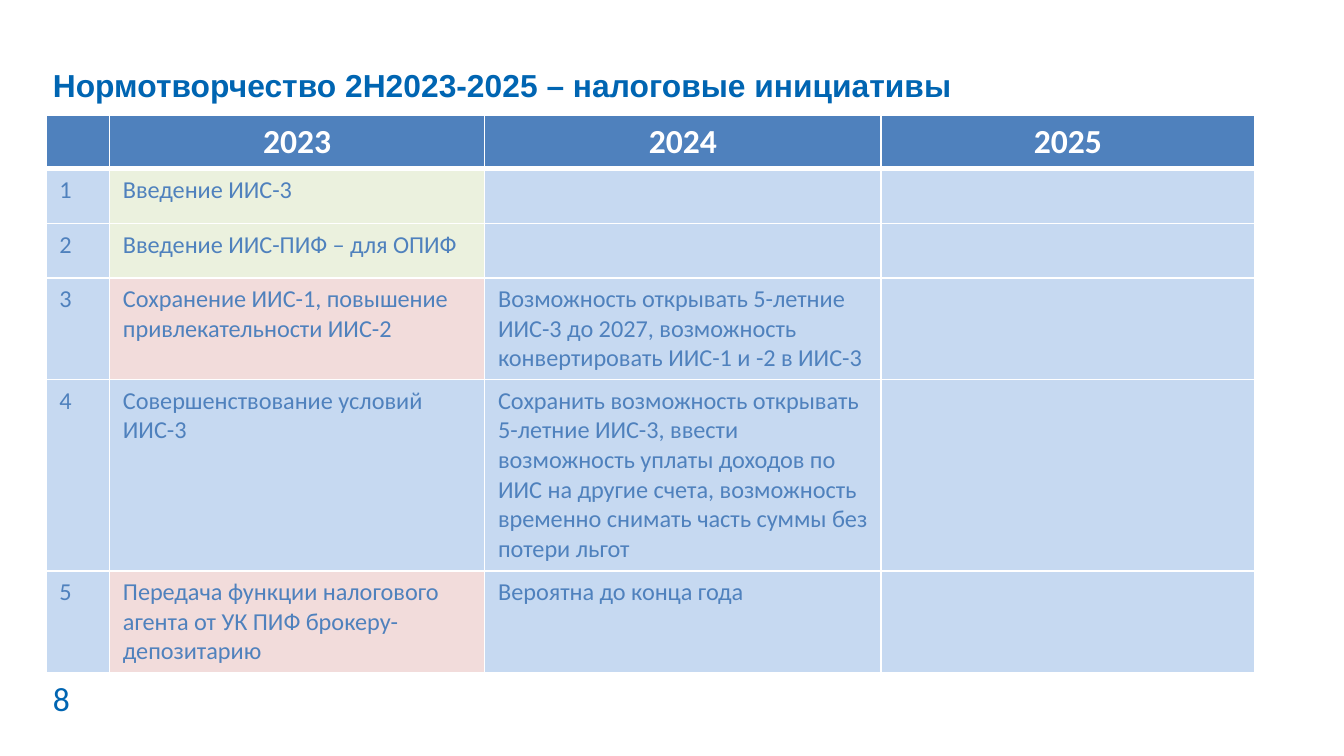
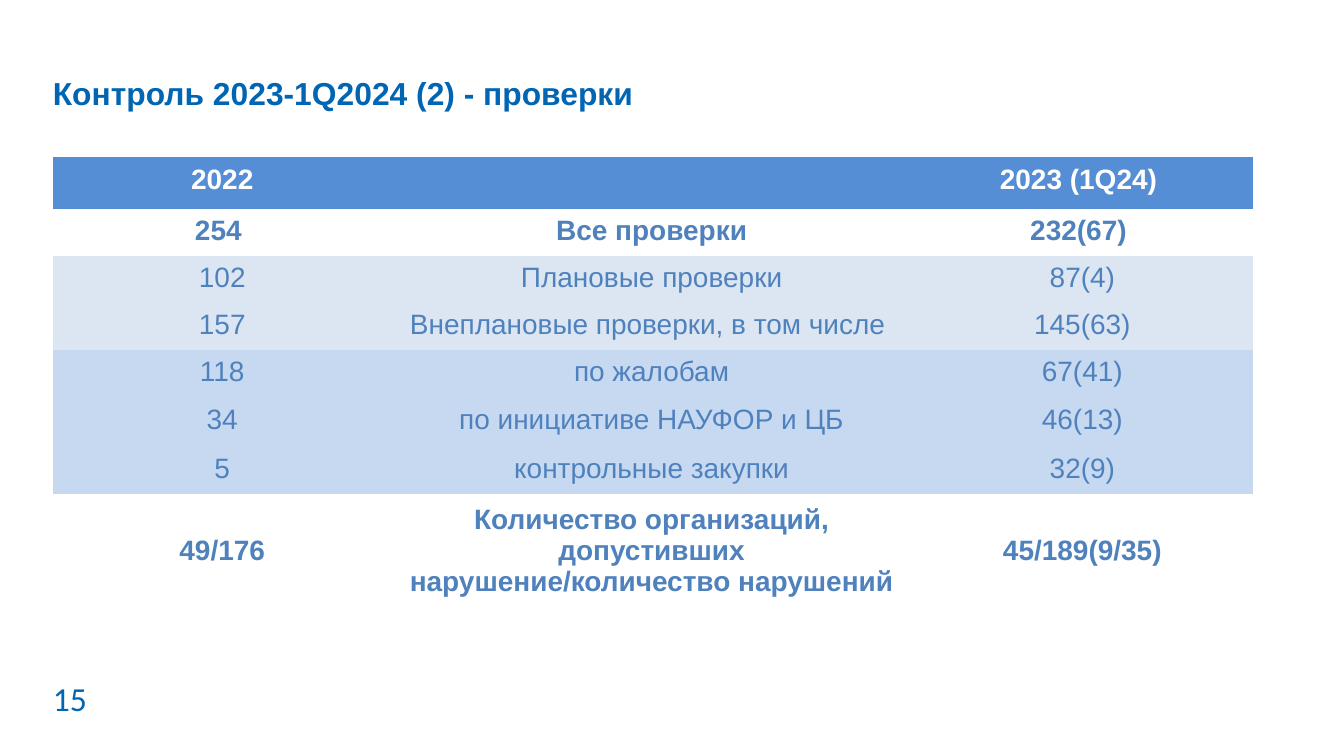
from lxml import etree
from pptx import Presentation
from pptx import util as u
from pptx.dml.color import RGBColor
from pptx.enum import text
from pptx.oxml.ns import qn

WHITE = RGBColor(0xFF, 0xFF, 0xFF)
NAVY = RGBColor(0x00, 0x65, 0xB2)
STEEL = RGBColor(0x4F, 0x81, 0xBD)
AZURE = RGBColor(0x55, 0x8E, 0xD5)
SKY = RGBColor(0xC6, 0xD9, 0xF1)
PALE = RGBColor(0xDC, 0xE6, 0xF2)
GREEN = RGBColor(0xEB, 0xF1, 0xDE)
PINK = RGBColor(0xF2, 0xDC, 0xDB)
PLAIN = "{2D5ABB26-0587-4C30-8999-92F81FD0307C}"
LEFT = text.PP_ALIGN.LEFT
MID = text.PP_ALIGN.CENTER

PLANS = [
    (1.02, STEEL, ["", "2023", "2024", "2025"]),
    (1.03, GREEN, ["1", "Введение ИИС-3", "", ""]),
    (1.03, GREEN, ["2", "Введение ИИС-ПИФ – для ОПИФ", "", ""]),
    (1.92, PINK, ["3", "Сохранение ИИС-1, повышение привлекательности ИИС-2",
                  "Возможность открывать 5-летние ИИС-3 до 2027, возможность "
                  "конвертировать ИИС-1 и -2 в ИИС-3", ""]),
    (3.61, SKY, ["4", "Совершенствование условий ИИС-3",
                 "Сохранить возможность открывать 5-летние ИИС-3, ввести "
                 "возможность уплаты доходов по ИИС на другие счета, возможность "
                 "временно снимать часть суммы без потери льгот", ""]),
    (1.93, PINK, ["5", "Передача функции налогового агента от УК ПИФ брокеру-депозитарию",
                  "Вероятна до конца года", ""]),
]
CHECKS = [
    (0.97, AZURE, ["2022", "", "2023 (1Q24) "]),
    (0.86, None, ["254 ", "Все проверки", "232(67) "]),
    (0.86, PALE, ["102", "Плановые проверки", "87(4)"]),
    (0.86, PALE, ["157", "Внеплановые проверки, в том числе ", "145(63)"]),
    (0.86, SKY, ["118", "по жалобам", "67(41)"]),
    (0.94, SKY, ["34", "по инициативе НАУФОР и ЦБ", "46(13)"]),
    (0.89, SKY, ["5", "контрольные закупки", "32(9)"]),
    (2.03, None, ["49/176", "Количество организаций, допустивших "
                  "нарушение/количество нарушений", "45/189(9/35)"]),
]


def style(para, face, size, color, bold=False):
    for run in para.runs:
        font = run.font
        font.name, font.size, font.bold = face, u.Pt(size), bold
        font.color.rgb = color
    if not para.runs:
        etree.SubElement(para._p, qn("a:endParaRPr"), sz=str(size * 100))


def label(slide, words, top, width, height, face, size, bold=False):
    box = slide.shapes.add_textbox(u.Cm(1), u.Cm(top), u.Cm(width), u.Cm(height))
    frame = box.text_frame
    frame.word_wrap = True
    frame.margin_left = frame.margin_right = frame.margin_top = frame.margin_bottom = 0
    frame.text = words
    style(frame.paragraphs[0], face, size, NAVY, bold)
    return frame.paragraphs[0]


def page(deck, title, top, width, number):
    slide = deck.slides.add_slide(deck.slide_layouts[6])
    label(slide, number, 12.8, 5.9, 0.71, "Calibri", 18)
    label(slide, title, top, width, 0.94, "Arial", 17, True).line_spacing = u.Pt(28)
    return slide


def edge(cell, head):
    props = cell._tc.get_or_add_tcPr()
    for side in "LRTB":
        points = 3 if head and side == "B" else 1
        line = etree.SubElement(props, qn(f"a:ln{side}"), w=str(u.Pt(points)))
        fill = etree.SubElement(line, qn("a:solidFill"))
        etree.SubElement(fill, qn("a:srgbClr"), val=str(WHITE))


def grid(slide, left, top, cols, rows, paint):
    high = sum(row[0] for row in rows)
    frame = slide.shapes.add_table(len(rows), len(cols), u.Cm(left), u.Cm(top),
                                   u.Cm(sum(cols)), u.Cm(high))
    table = frame.table
    table.horz_banding = False
    next(frame.element.iter(qn("a:tableStyleId"))).text = PLAIN
    for col, width in zip(table.columns, cols):
        col.width = u.Cm(width)
    for r, (height, color, words) in enumerate(rows):
        table.rows[r].height = u.Cm(height)
        for c, word in enumerate(words):
            cell = table.cell(r, c)
            cell.text = word
            paint(cell, r, c, color)


def plan(cell, r, c, color):
    head = r == 0
    edge(cell, head)
    cell.fill.solid()
    cell.fill.fore_color.rgb = color if head or c == 1 else SKY
    para = cell.text_frame.paragraphs[0]
    para.alignment = MID if head else LEFT
    style(para, "Calibri", 18 if head or not cell.text else 13,
          WHITE if head else STEEL, head)


def check(cell, r, c, color):
    if color is None:
        cell.fill.background()
    else:
        cell.fill.solid()
        cell.fill.fore_color.rgb = color
    if r == len(CHECKS) - 1:
        cell.vertical_anchor = text.MSO_ANCHOR.MIDDLE
    para = cell.text_frame.paragraphs[0]
    para.alignment = MID
    style(para, "Arial", 15, WHITE if r == 0 else STEEL, r == 0 or color is None)


def main():
    deck = Presentation()
    deck.slide_width, deck.slide_height = u.Cm(25.4), u.Cm(14.28)
    slide = page(deck, "Нормотворчество 2H2023-2025 – налоговые инициативы", 0.97, 18.9, "8")
    grid(slide, 0.87, 2.17, [1.2, 7.09, 7.49, 7.06], PLANS, plan)
    slide = page(deck, "Контроль 2023-1Q2024 (2) - проверки", 1.12, 14.3, "15")
    grid(slide, 1, 2.97, [6.4, 9.83, 6.45], CHECKS, check)
    deck.save("out.pptx")


if __name__ == "__main__":
    main()
